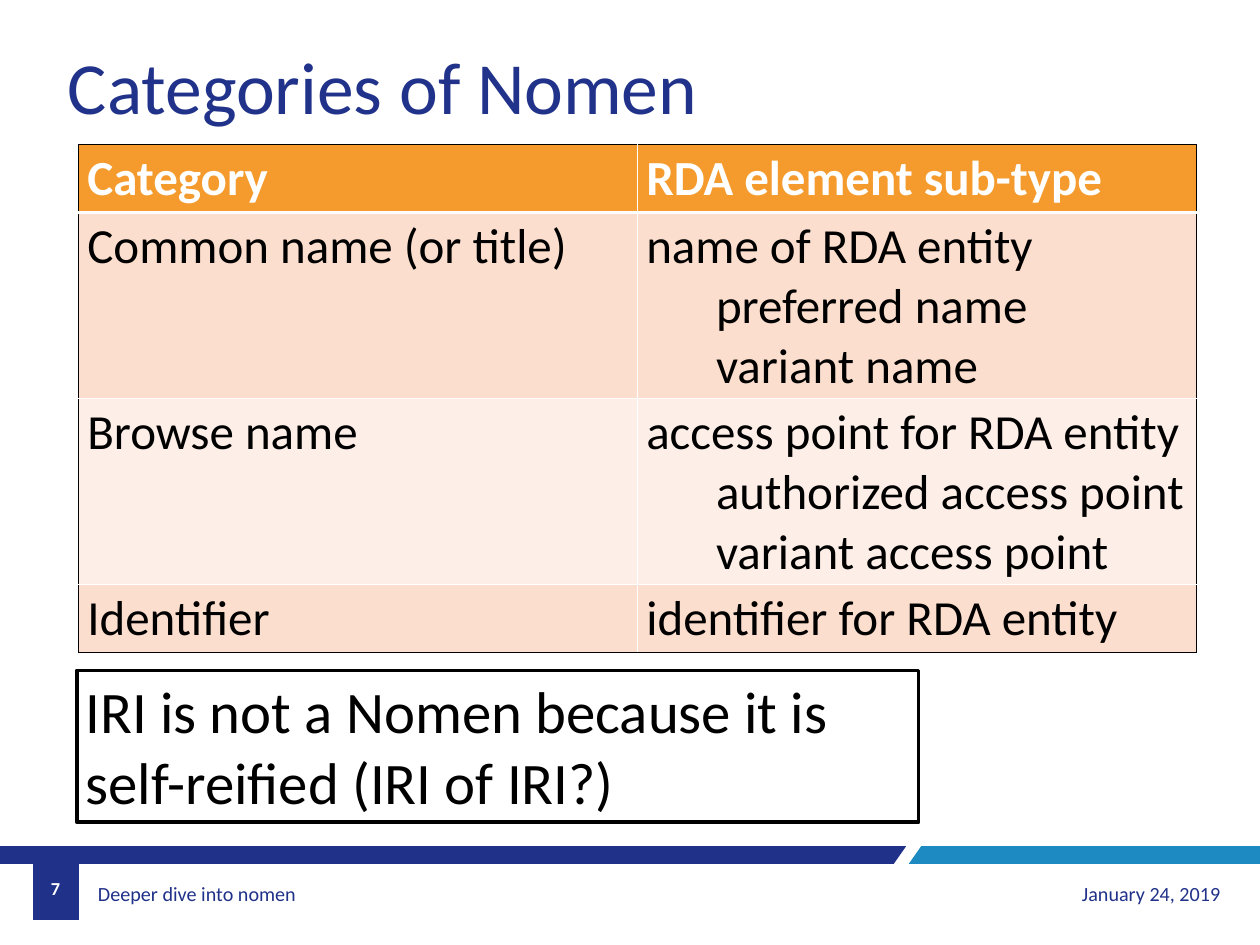
import pptx
import pptx.util
import pptx.dml.color
import pptx.enum.shapes
import pptx.enum.text
from lxml import etree
from pptx.util import Inches

# Content
TITLE = "Categories of Nomen"
NOTE = "IRI is not a Nomen because it is self-reified (IRI of IRI?)"
FOOTER, DATE, NUMBER = "Deeper dive into nomen", "January 24, 2019", "7"
# Each cell is a list of lines; lines after the first are sub-types
ROWS = [
    (["Category"], ["RDA element sub-type"]),
    (["Common name (or title)"],
     ["name of RDA entity", "preferred name", "variant name"]),
    (["Browse name"],
     ["access point for RDA entity", "authorized access point",
      "variant access point"]),
    (["Identifier"], ["identifier for RDA entity"]),
]
THEME = {
    "font": "Calibri", "navy": "203189", "title": "21328A", "blue": "1D8BC1",
    "white": "FFFFFF", "black": "000000", "head": "F59B2D",
    "bands": ("FDEFE8", "FBDECD"),
    "title_size": 60, "note_size": 48, "cell_size": 40,
    "foot_size": 16.4, "num_size": 14.9,
}
WIDTH, HEIGHT = 14.28, 10.71
BAND_TOP, BAND_LOW = 9.59, 9.79
FOOT_TOP, FOOT_TALL = 9.85, 0.55
LINE, PAD, INDENT = 0.67, 0.1, 0.79

ALIGN = pptx.enum.text.PP_ALIGN
ANCHOR = pptx.enum.text.MSO_ANCHOR

deck = pptx.Presentation()
deck.slide_width, deck.slide_height = Inches(WIDTH), Inches(HEIGHT)
slide = deck.slides.add_slide(deck.slide_layouts[6])
shapes = slide.shapes


def color(code):
    return pptx.dml.color.RGBColor.from_string(code)


def write(frame, lines, size, ink="black", bold=False, align=ALIGN.LEFT,
          anchor=ANCHOR.TOP, indent=0):
    frame.word_wrap = True
    frame.vertical_anchor = anchor
    for i, line in enumerate(lines):
        para = frame.add_paragraph() if i else frame.paragraphs[0]
        para.alignment = align
        if i and indent:
            para._p.get_or_add_pPr().set("marL", str(Inches(indent)))
        run = para.add_run()
        run.text = line
        font = run.font
        font.name, font.size = THEME["font"], pptx.util.Pt(THEME[size])
        font.bold, font.color.rgb = bold, color(THEME[ink])


def label(box, text, size, **style):
    frame = shapes.add_textbox(*map(Inches, box)).text_frame
    write(frame, [text], size, **style)
    return frame


def shade(points, ink):
    first, *rest = [(Inches(x), Inches(y)) for x, y in points]
    path = shapes.build_freeform(*first)
    path.add_line_segments(rest, close=True)
    form = path.convert_to_shape()
    form.shadow.inherit = False
    form.fill.solid()
    form.fill.fore_color.rgb = color(THEME[ink])
    form.line.fill.background()


def edge(cell, side, ink, width):
    props = cell._tc.get_or_add_tcPr()
    tag = "{http://schemas.openxmlformats.org/drawingml/2006/main}"
    line = etree.SubElement(props, tag + "ln" + side,
                            w=str(pptx.util.Pt(width)))
    fill = etree.SubElement(line, tag + "solidFill")
    etree.SubElement(fill, tag + "srgbClr", val=THEME[ink])


# Footer bands and number tab
shade([(10.27, BAND_TOP), (0, BAND_TOP), (0, BAND_LOW), (10.13, BAND_LOW)],
      "navy")
shade([(WIDTH, BAND_TOP), (10.44, BAND_TOP), (10.3, BAND_LOW),
       (WIDTH, BAND_LOW)], "blue")
shade([(0.37, 10.43), (0.89, 10.43), (0.89, BAND_TOP), (0.37, BAND_TOP)],
      "navy")

# Footer text
foot = label((1.04, FOOT_TOP, 4.02, FOOT_TALL), FOOTER, "foot_size",
             ink="navy", anchor=ANCHOR.MIDDLE)
foot.margin_left = foot.margin_right = Inches(0.07)
foot.margin_top = foot.margin_bottom = Inches(0.04)
label((10.27, FOOT_TOP, 3.66, FOOT_TALL), DATE, "foot_size", ink="navy",
      align=ALIGN.RIGHT, anchor=ANCHOR.MIDDLE)
label((0.37, BAND_LOW, 0.52, FOOT_TALL), NUMBER, "num_size", ink="white",
      bold=True, align=ALIGN.CENTER, anchor=ANCHOR.MIDDLE)

# Title
label((0.67, 0.41, 7.55, 1.22), TITLE, "title_size", ink="title")

# Table: black frame, white inner rules, thick rule under the header
talls = [LINE * max(map(len, row)) + PAD for row in ROWS]
last, end = len(ROWS) - 1, len(ROWS[0]) - 1
table = shapes.add_table(len(ROWS), len(ROWS[0]), *map(
    Inches, (0.89, 1.64, 12.67, sum(talls)))).table
for r, row in enumerate(ROWS):
    table.rows[r].height = Inches(talls[r])
    for c, lines in enumerate(row):
        cell = table.cell(r, c)
        outer = {"L": c == 0, "R": c == end, "T": r == 0, "B": r == last}
        for side, out in outer.items():
            thick = (r, side) in ((0, "B"), (1, "T"))
            edge(cell, side, "black" if out else "white", 3 if thick else 1)
        cell.fill.solid()
        cell.fill.fore_color.rgb = color(
            THEME["bands"][r % 2] if r else THEME["head"])
        write(cell.text_frame, lines, "cell_size", bold=r == 0,
              ink="black" if r else "white", indent=INDENT)

# Framed note
note = shapes.add_shape(pptx.enum.shapes.MSO_SHAPE.RECTANGLE,
                        *map(Inches, (0.87, 7.6, 9.54, 1.72)))
note.shadow.inherit = False
note.fill.background()
note.line.color.rgb = color(THEME["black"])
note.line.width = pptx.util.Pt(3)
write(note.text_frame, [NOTE], "note_size")

deck.save("out.pptx")
